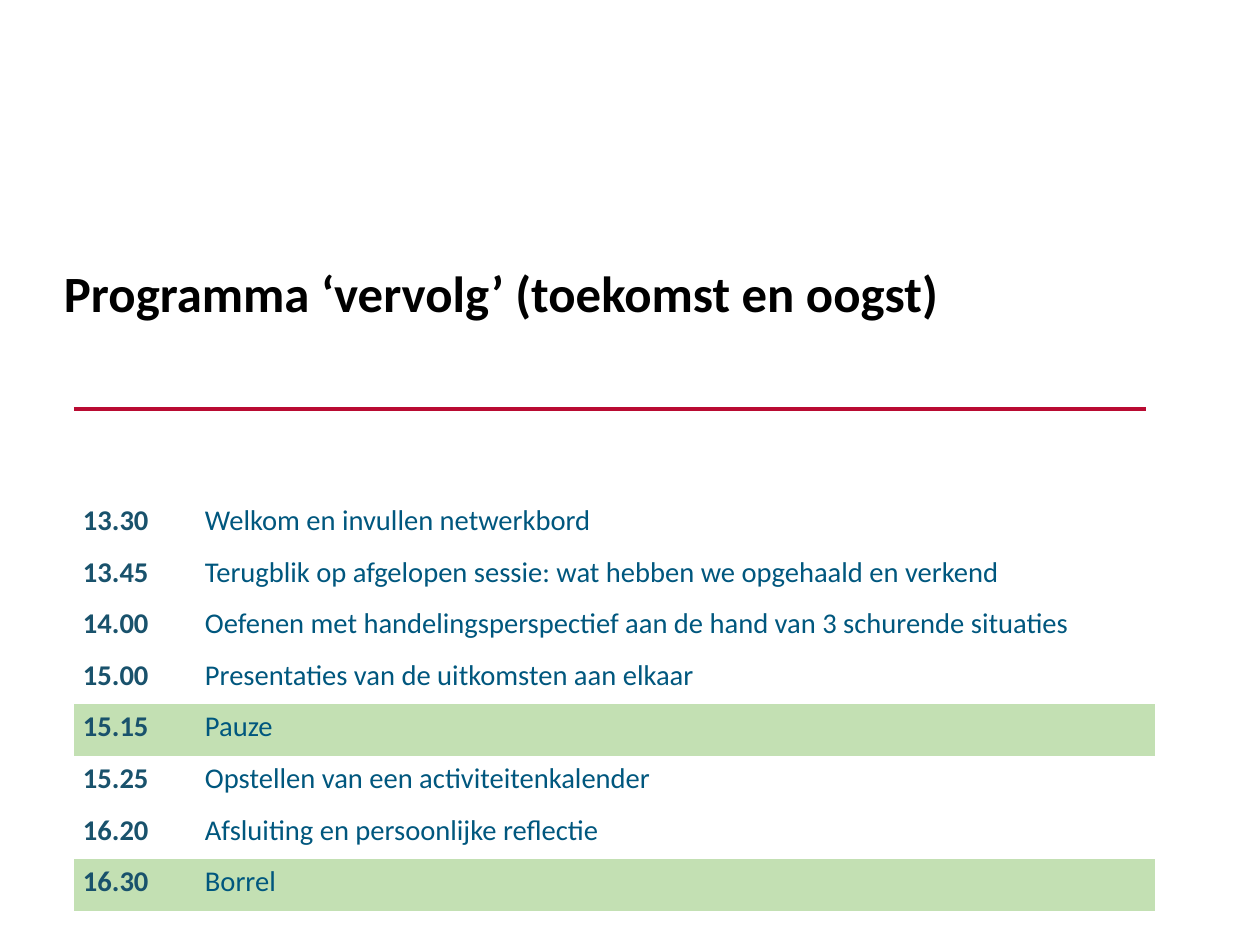
from typing import NamedTuple

from lxml import etree
from pptx import Presentation
from pptx.dml.color import RGBColor
from pptx.enum.shapes import MSO_CONNECTOR
from pptx.enum.text import MSO_ANCHOR
from pptx.oxml.ns import qn
from pptx.util import Pt

PX = 8000
FONT = "Calibri"
BLACK = RGBColor(0x00, 0x00, 0x00)
WHITE = RGBColor(0xFF, 0xFF, 0xFF)
RED = RGBColor(0xB9, 0x0B, 0x32)
GREEN = RGBColor(0xC3, 0xE0, 0xB3)
NAVY = RGBColor(0x19, 0x52, 0x6C)
BLUE = RGBColor(0x00, 0x57, 0x7E)
STRAIGHT = MSO_CONNECTOR.STRAIGHT
TOP = MSO_ANCHOR.TOP
PLAIN_STYLE = "{2D5ABB26-0587-4C30-8999-92F81FD0307C}"


class Item(NamedTuple):
    time: str
    topic: str
    fill: RGBColor = WHITE


ITEMS = [
    Item("13.30", "Welkom en invullen netwerkbord"),
    Item("13.45", "Terugblik op afgelopen sessie: wat hebben we opgehaald en verkend"),
    Item("14.00", "Oefenen met handelingsperspectief aan de hand van 3 schurende situaties"),
    Item("15.00", "Presentaties van de uitkomsten aan elkaar"),
    Item("15.15", "Pauze", GREEN),
    Item("15.25", "Opstellen van een activiteitenkalender"),
    Item("16.20", "Afsluiting en persoonlijke reflectie"),
    Item("16.30", "Borrel", GREEN),
]


def px(count: int) -> int:
    return count * PX


def write(frame, text: str, *, size: int, color: RGBColor,
          bold: bool = False, spacing: float = 1.0) -> None:
    frame.word_wrap = True
    para = frame.paragraphs[0]
    para.line_spacing = spacing
    run = para.add_run()
    run.text = text
    run.font.name = FONT
    run.font.size = Pt(size)
    run.font.bold = bold
    run.font.color.rgb = color


def add_title(slide, text: str) -> None:
    frame = slide.shapes.add_textbox(px(64), px(280), px(1134), px(158)).text_frame
    frame.margin_left = frame.margin_right = 0
    frame.margin_top = frame.margin_bottom = 0
    frame.vertical_anchor = TOP
    write(frame, text, size=32, color=BLACK, bold=True, spacing=0.67)


def add_rule(slide) -> None:
    rule = slide.shapes.add_connector(STRAIGHT, px(74), px(409), px(1146), px(409))
    rule.line.color.rgb = RED
    rule.line.width = Pt(2.25)
    etree.SubElement(rule._element.spPr, qn("a:effectLst"))


def fill_cell(cell, text: str, fill: RGBColor, color: RGBColor, bold: bool) -> None:
    cell.margin_left = cell.margin_right = px(9)
    cell.margin_top = cell.margin_bottom = 0
    cell.vertical_anchor = TOP
    cell.fill.solid()
    cell.fill.fore_color.rgb = fill
    write(cell.text_frame, text, size=18, color=color, bold=bold, spacing=1.15)


def add_agenda(slide, items: list[Item]) -> None:
    frame = slide.shapes.add_table(len(items), 2, px(74), px(498), px(1081), px(413))
    table = frame.table
    table.first_row = table.horz_banding = False
    table._tbl.tblPr.find(qn("a:tableStyleId")).text = PLAIN_STYLE
    for col, width in zip(table.columns, (122, 959)):
        col.width = px(width)
    for row, item in zip(table.rows, items):
        time, topic = row.cells
        fill_cell(time, item.time, item.fill, NAVY, True)
        fill_cell(topic, item.topic, item.fill, BLUE, False)


def main() -> None:
    deck = Presentation()
    deck.slide_width, deck.slide_height = px(1260), px(945)
    slide = deck.slides.add_slide(deck.slide_layouts[6])
    add_agenda(slide, ITEMS)
    add_title(slide, "Programma ‘vervolg’ (toekomst en oogst)")
    add_rule(slide)
    deck.save("out.pptx")


if __name__ == "__main__":
    main()
